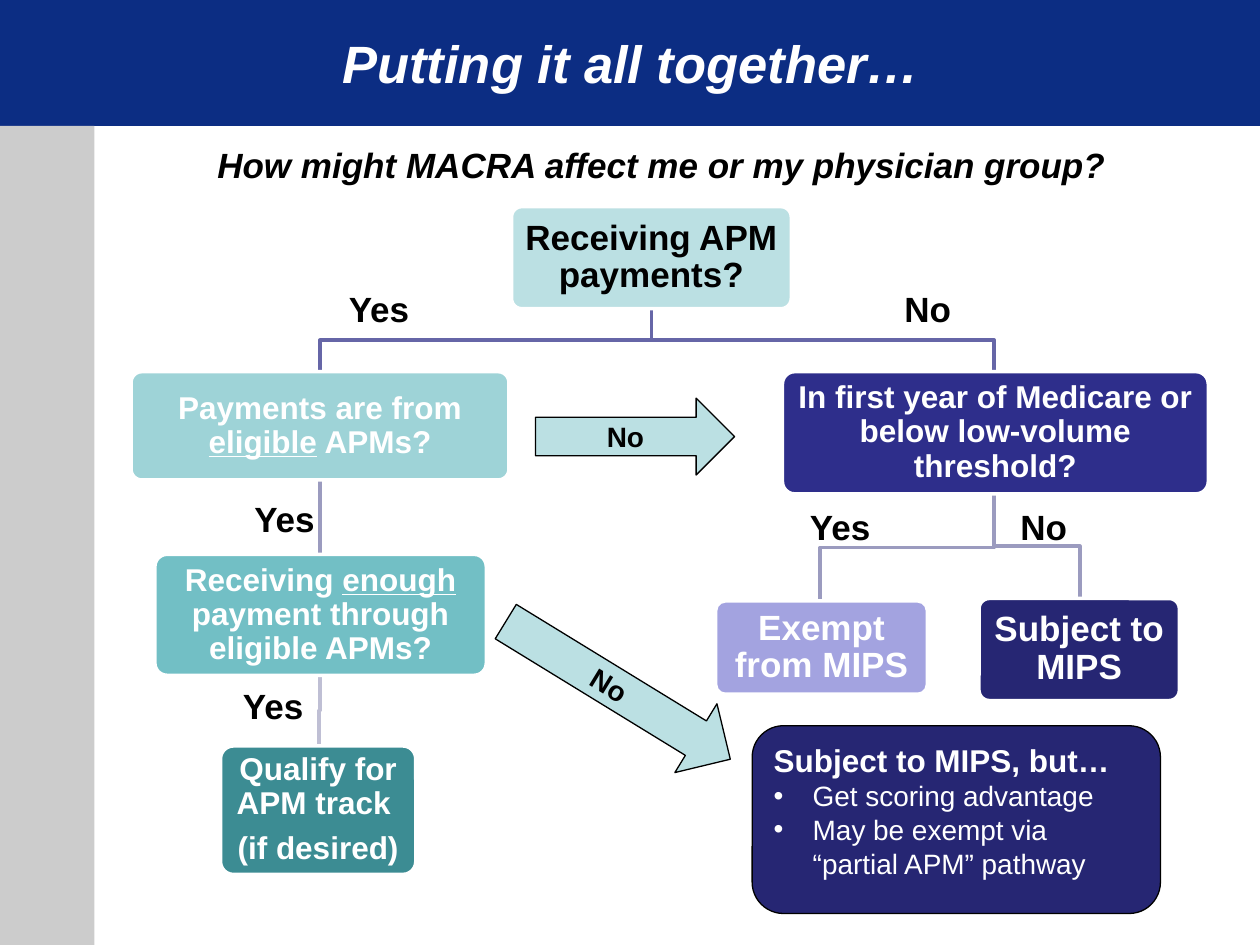
from dataclasses import dataclass

from lxml.etree import SubElement
from pptx import Presentation
from pptx.dml.color import RGBColor
from pptx.enum.shapes import MSO_SHAPE as Shape
from pptx.enum.text import MSO_ANCHOR as Anchor, PP_ALIGN as Align
from pptx.oxml.ns import qn
from pptx.util import Inches, Pt


@dataclass(frozen=True)
class Theme:
    font: str = "Arial"
    white: str = "FFFFFF"
    black: str = "000000"
    band: str = "0C2D83"
    sidebar: str = "CCCCCC"
    pale: str = "BBE0E3"
    aqua: str = "9ED3D7"
    teal: str = "72BFC5"
    deep_teal: str = "3C8C93"
    indigo: str = "2E2E8B"
    lilac: str = "A3A3E0"
    navy: str = "262673"
    link_top: str = "6666A7"
    link_middle: str = "9B9BBF"
    link_bottom: str = "BFBFD4"
    title: int = 30
    large: int = 20
    medium: int = 18
    small: int = 16


THEME = Theme()


def color(code):
    return RGBColor.from_string(code)


def style_text(para, size, ink, bold=True, italic=False, align=Align.CENTER):
    para.alignment = align
    font = para.font
    font.name, font.size = THEME.font, Pt(size)
    font.bold, font.italic = bold, italic
    font.color.rgb = color(ink)


def add_spans(para, text):
    """Write text, underlining whatever stands between underscores."""
    for index, part in enumerate(text.split("_")):
        span = para.add_run()
        span.text = part
        if index % 2:
            span.font.underline = True


def add_box(page, kind, place, fill, line=None, width=0.75):
    box = page.shapes.add_shape(kind, *map(Inches, place))
    box.shadow.inherit = False
    box.fill.solid()
    box.fill.fore_color.rgb = color(fill)
    if line:
        box.line.color.rgb = color(line)
        box.line.width = Pt(width)
    else:
        box.line.fill.background()
    return box


def add_node(page, place, fill, size, *lines, ink=THEME.white):
    box = add_box(page, Shape.ROUNDED_RECTANGLE, place, fill, THEME.white, 2)
    box.adjustments[0] = 0.1
    frame = box.text_frame
    frame.word_wrap = True
    frame.vertical_anchor = Anchor.MIDDLE
    inset = Inches(size * 0.004)
    frame.margin_left = frame.margin_right = inset
    frame.margin_top = frame.margin_bottom = inset
    for index, line in enumerate(lines):
        para = frame.add_paragraph() if index else frame.paragraphs[0]
        add_spans(para, line)
        para.line_spacing = 0.9
        para.space_after = Pt(size * 0.35)
        style_text(para, size, ink)


def add_link(page, start, end, ink):
    """Draw an elbow that turns halfway down."""
    (x1, y1), (x2, y2) = start, end
    middle = (y1 + y2) / 2
    builder = page.shapes.build_freeform(Inches(x1), Inches(y1))
    turns = [(x1, middle), (x2, middle), (x2, y2)]
    builder.add_line_segments([(Inches(x), Inches(y)) for x, y in turns], close=False)
    link = builder.convert_to_shape()
    link.shadow.inherit = False
    link.fill.background()
    link.line.color.rgb = color(ink)
    link.line.width = Pt(2)


def add_label(page, place, text, italic=False, align=Align.LEFT):
    box = page.shapes.add_textbox(*map(Inches, place))
    box.text_frame.word_wrap = True
    para = box.text_frame.paragraphs[0]
    para.text = text
    style_text(para, THEME.large, THEME.black, italic=italic, align=align)


def add_arrow(page, place, text, rotation=0):
    arrow = add_box(page, Shape.RIGHT_ARROW, place, THEME.pale, THEME.black)
    arrow.rotation = rotation
    arrow.text_frame.vertical_anchor = Anchor.MIDDLE
    para = arrow.text_frame.paragraphs[0]
    para.text = text
    style_text(para, THEME.small, THEME.black)


def add_bullet(para):
    props = para._p.get_or_add_pPr()
    props.set("marL", str(Inches(0.31)))
    props.set("indent", str(-Inches(0.31)))
    SubElement(props, qn("a:buFont")).set("typeface", THEME.font)
    SubElement(props, qn("a:buChar")).set("char", "•")


def add_outcome(page, place, heading, points):
    box = add_box(page, Shape.ROUNDED_RECTANGLE, place, THEME.navy, THEME.black)
    frame = box.text_frame
    frame.word_wrap = True
    frame.vertical_anchor = Anchor.TOP
    para = frame.paragraphs[0]
    para.text = heading
    style_text(para, THEME.medium, THEME.white, align=Align.LEFT)
    for point in points:
        para = frame.add_paragraph()
        para.text = point
        add_bullet(para)
        style_text(para, THEME.small, THEME.white, bold=False, align=Align.LEFT)


def add_heading(page, text):
    title = page.shapes.title
    title.left, title.top, title.width, title.height = map(Inches, (0.92, 0, 8.18, 1))
    title.text_frame.vertical_anchor = Anchor.MIDDLE
    para = title.text_frame.paragraphs[0]
    para.text = text
    style_text(para, THEME.title, THEME.white, italic=True)
    # The title band and sidebar lie behind the title
    for place, fill in (((0, 0, 10, 1), THEME.band), ((0, 1, 0.75, 6.5), THEME.sidebar)):
        panel = add_box(page, Shape.RECTANGLE, place, fill)
        title.element.addprevious(panel.element)


def main():
    deck = Presentation()
    deck.slide_width, deck.slide_height = Inches(10), Inches(7.5)
    page = deck.slides.add_slide(deck.slide_layouts[5])
    add_heading(page, "Putting it all together…")
    add_label(page, (1.29, 1.09, 7.92, 0.44),
              "How might MACRA affect me or my physician group?",
              italic=True, align=Align.CENTER)

    # Links between the questions
    root, left, right = 5.17, 2.54, 7.89
    for start, end, ink in (
        ((root, 2.45), (left, 2.95), THEME.link_top),
        ((root, 2.45), (right, 2.95), THEME.link_top),
        ((left, 3.81), (left, 4.4), THEME.link_middle),
        ((left, 5.36), (2.53, 5.92), THEME.link_bottom),
        ((right, 3.92), (6.51, 4.77), THEME.link_middle),
        ((right, 3.92), (8.57, 4.75), THEME.link_middle),
    ):
        add_link(page, start, end, ink)

    # Questions and results
    large, medium = THEME.large, THEME.medium
    add_node(page, (4.06, 1.64, 2.22, 0.81), THEME.pale, large,
             "Receiving APM payments?", ink=THEME.black)
    add_node(page, (1.04, 2.95, 3, 0.86), THEME.aqua, medium,
             "Payments are from _eligible_ APMs?")
    add_node(page, (1.23, 4.4, 2.63, 0.96), THEME.teal, medium,
             "Receiving _enough_ payment through eligible APMs?")
    add_node(page, (1.75, 5.92, 1.55, 1.02), THEME.deep_teal, medium,
             "Qualify for APM track ", "(if desired)")
    add_node(page, (6.21, 2.95, 3.38, 0.97), THEME.indigo, medium,
             "In first year of Medicare or below low-volume threshold?")
    add_node(page, (5.68, 4.77, 1.68, 0.74), THEME.lilac, large, "Exempt from MIPS")
    add_node(page, (7.77, 4.75, 1.59, 0.81), THEME.navy, large, "Subject to MIPS")

    # Answers beside the links
    for x, y, answer in ((2.67, 2.23, "Yes"), (7.08, 2.23, "No"), (1.92, 3.9, "Yes"),
                         (6.33, 3.96, "Yes"), (8, 3.96, "No"), (1.83, 5.38, "Yes")):
        add_label(page, (x, y, 1, 0.44), answer)

    # Ways across to MIPS
    add_arrow(page, (4.25, 3.16, 1.58, 0.61), "No")
    add_arrow(page, (3.86, 5.16, 2.09, 0.64), "No", rotation=31.5)
    add_outcome(page, (5.97, 5.76, 3.24, 1.49), "Subject to MIPS, but…",
                ("Get scoring advantage", "May be exempt via “partial APM” pathway"))

    deck.save("out.pptx")


if __name__ == "__main__":
    main()
